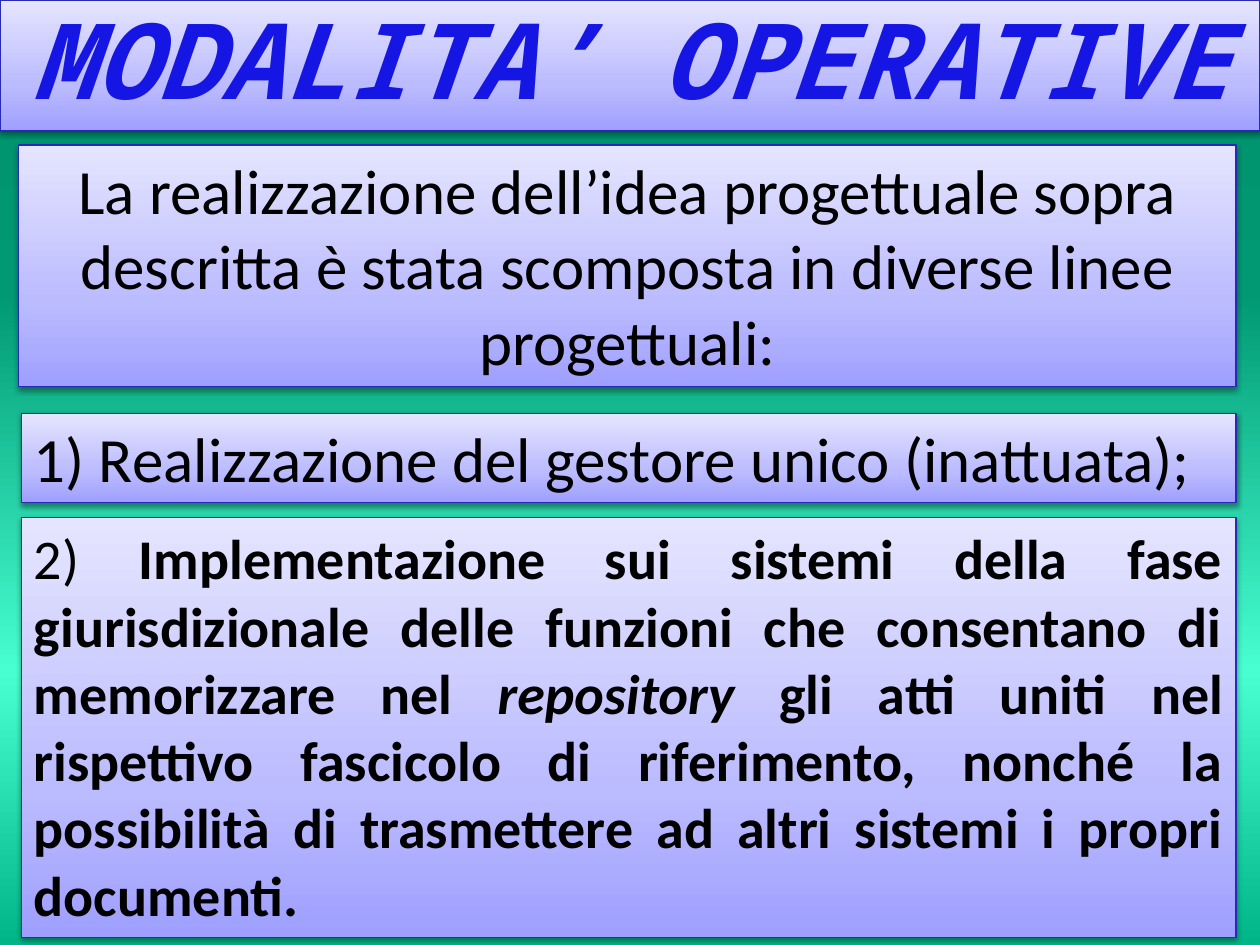
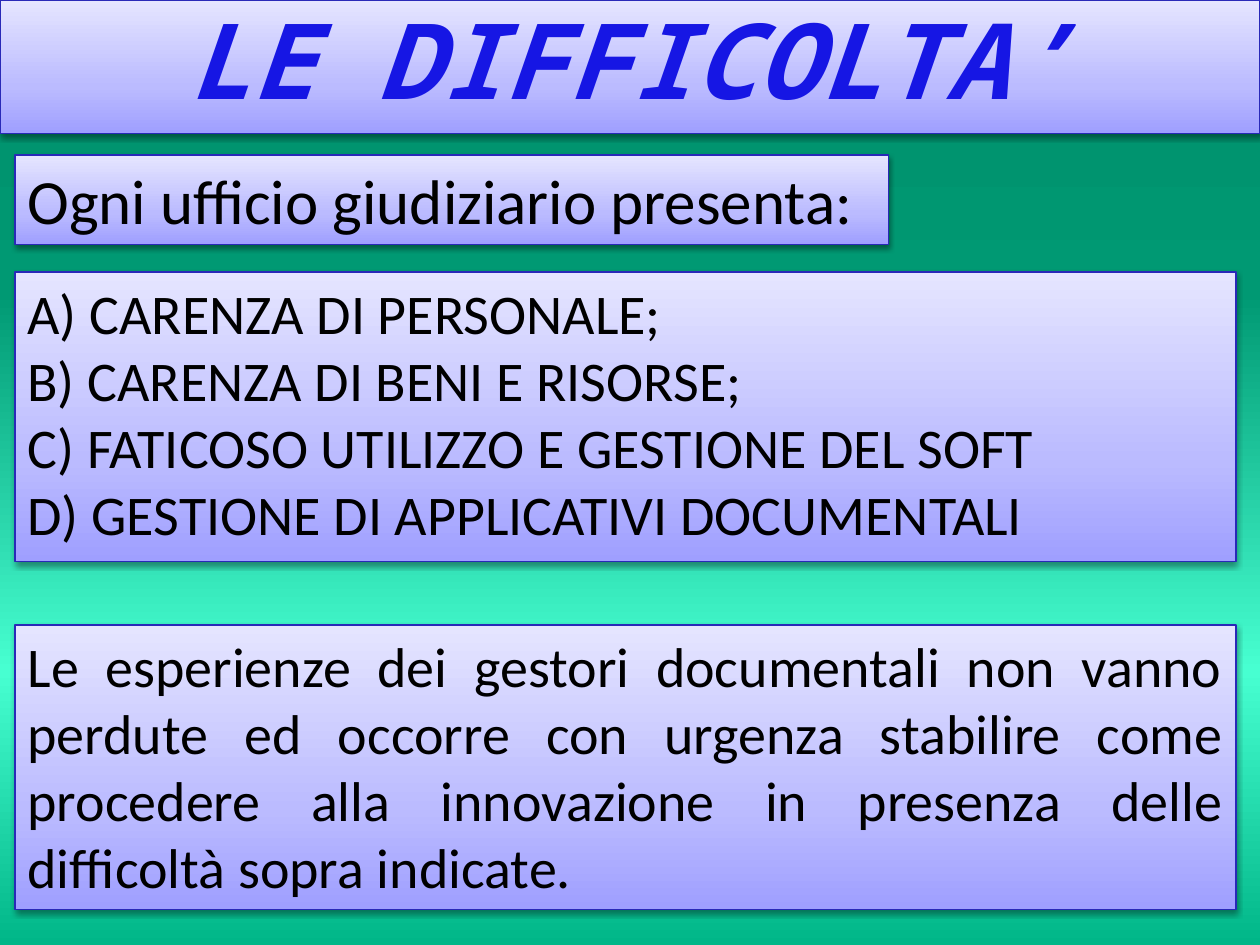
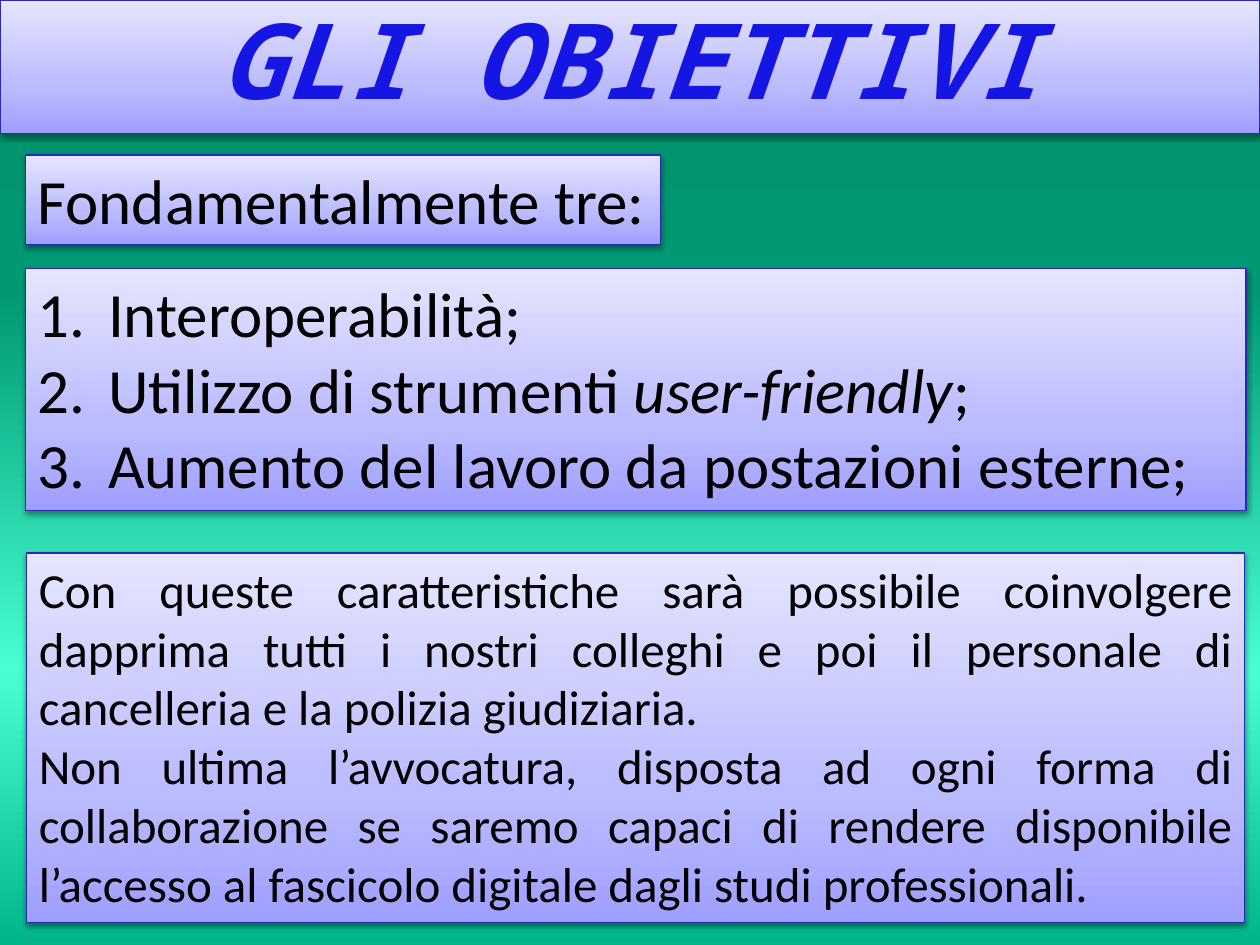
from lxml import etree
from pptx import Presentation
from pptx.dml.color import RGBColor
from pptx.enum.shapes import MSO_SHAPE
from pptx.enum.text import MSO_ANCHOR, MSO_AUTO_SIZE, PP_ALIGN
from pptx.oxml.ns import qn
from pptx.util import Pt

RECT = MSO_SHAPE.RECTANGLE
TOP = MSO_ANCHOR.TOP
GROW = MSO_AUTO_SIZE.SHAPE_TO_FIT_TEXT
LEFT, MID, FULL = PP_ALIGN.LEFT, PP_ALIGN.CENTER, PP_ALIGN.JUSTIFY
SCALE = 9144
WIDE, HIGH = 1000, 750
BLACK, EDGE = "000000", "2929B8"
UP, DOWN = 270, 90
GREEN = [(0, "00B688"), (29, "47FFD1"), (69, "009973"), (97, "008F6B")]
LILAC = [(0, "9F9FFF"), (35, "BBBBFF"), (100, "E5E5FF")]
BLUE = [(0, "7979FF"), (75, "1616E4"), (100, "0000BD")]
BODY = {"name": "Calibri"}
HEAD = {"name": "Noto Sans Mono", "bold": True, "italic": True}
BOLD, SLANT = {"bold": True}, {"italic": True}


def px(size):
    return size * SCALE


def tint(code):
    return RGBColor.from_string(code)


def put(item, look):
    for key, value in look.items():
        setattr(item, key, value)


def add(root, tag, **look):
    return etree.SubElement(root, qn(tag), {k: str(v) for k, v in look.items()})


def blend(fill, root, stops, angle):
    fill.solid()
    old = next(root.iter(qn("a:solidFill")))
    grad = etree.Element(qn("a:gradFill"), rotWithShape="1")
    row = add(grad, "a:gsLst")
    for spot, code in stops:
        add(add(row, "a:gs", pos=spot * 1000), "a:srgbClr", val=code)
    add(grad, "a:lin", ang=angle * 60000, scaled=0)
    old.getparent().replace(old, grad)


class Deck:
    def __init__(self):
        self.file = Presentation()
        put(self.file, {"slide_width": px(WIDE), "slide_height": px(HIGH)})

    def page(self, title, high):
        self.slide = self.file.slides.add_slide(self.file.slide_layouts[6])
        blend(self.slide.background.fill, self.slide.element, GREEN, UP)
        frame = self.panel(0, 0, WIDE, high)
        para = frame.paragraphs[0]
        put(para, {"alignment": MID, "line_spacing": 0.93})
        run = self.run(para, title, 60, HEAD)
        blend(run.font.fill, run._r, BLUE, DOWN)

    def panel(self, x, y, w, h):
        box = self.slide.shapes.add_shape(RECT, px(x), px(y), px(w), px(h))
        blend(box.fill, box.element.spPr, LILAC, UP)
        box.line.color.rgb = tint(EDGE)
        box.line.width = Pt(0.75)
        box.shadow.inherit = False
        glow = box.element.spPr.find(qn("a:effectLst"))
        shade = add(glow, "a:outerShdw", blurRad=Pt(3.1), dist=Pt(1.6),
                    dir=DOWN * 60000, rotWithShape=0)
        add(add(shade, "a:srgbClr", val=BLACK), "a:alpha", val=38000)
        put(box.text_frame, {"word_wrap": True, "auto_size": GROW,
                             "vertical_anchor": TOP})
        return box.text_frame

    def run(self, para, text, size, look):
        run = para.add_run()
        run.text = text
        put(run.font, {"size": Pt(size), **look})
        return run

    def text(self, x, y, w, h, size, paras, align=FULL, count=False):
        frame = self.panel(x, y, w, h)
        for i, parts in enumerate(paras):
            para = frame.add_paragraph() if i else frame.paragraphs[0]
            para.alignment = align
            if count:
                self.number(para)
            for part in [(parts, {})] if isinstance(parts, str) else parts:
                run = self.run(para, part[0], size, {**BODY, **part[1]})
                run.font.color.rgb = tint(BLACK)

    def number(self, para):
        props = para._p.get_or_add_pPr()
        props.set("marL", str(px(56)))
        props.set("indent", str(-px(56)))
        add(props, "a:buFont", typeface="+mj-lt")
        add(props, "a:buAutoNum", type="arabicPeriod")


def main():
    deck = Deck()

    deck.page("MODALITA’ OPERATIVE", 104)
    deck.text(15, 115, 966, 192, 36, [
        "La realizzazione dell’idea progettuale sopra descritta è stata "
        "scomposta in diverse linee progettuali:"], MID)
    deck.text(17, 328, 964, 71, 36, [
        "1) Realizzazione del gestore unico (inattuata);"])
    deck.text(17, 411, 964, 333, 32, [[
        ("2) ", {}),
        ("Implementazione sui sistemi della fase giurisdizionale delle "
         "funzioni che consentano di memorizzare nel ", BOLD),
        ("repository", {**BOLD, **SLANT}),
        (" gli atti uniti nel rispettivo fascicolo di riferimento, nonché "
         "la possibilità di trasmettere ad altri sistemi i propri "
         "documenti.", BOLD)]])

    deck.page("LE DIFFICOLTA’", 106)
    deck.text(12, 123, 693, 71, 36, ["Ogni ufficio giudiziario presenta:"])
    deck.text(12, 216, 969, 230, 32, [
        "A) CARENZA DI PERSONALE;",
        "B) CARENZA DI BENI E RISORSE;",
        "C) FATICOSO UTILIZZO E GESTIONE DEL SOFT",
        "D) GESTIONE DI APPLICATIVI DOCUMENTALI"], LEFT)
    deck.text(12, 496, 969, 226, 32, [
        "Le esperienze dei gestori documentali non vanno perdute ed occorre "
        "con urgenza stabilire come procedere alla innovazione in presenza "
        "delle difficoltà sopra indicate."])

    deck.page("GLI OBIETTIVI", 106)
    deck.text(20, 123, 504, 71, 36, ["Fondamentalmente tre:"])
    deck.text(20, 213, 969, 192, 36, [
        "Interoperabilità;",
        [("Utilizzo di strumenti ", {}), ("user-friendly", SLANT), (";", {})],
        "Aumento del lavoro da postazioni esterne;"], LEFT, True)
    deck.text(21, 439, 967, 293, 28, [
        "Con queste caratteristiche sarà possibile coinvolgere dapprima "
        "tutti i nostri colleghi e poi il personale di cancelleria e la "
        "polizia giudiziaria.",
        "Non ultima l’avvocatura, disposta ad ogni forma di collaborazione "
        "se saremo capaci di rendere disponibile l’accesso al fascicolo "
        "digitale dagli studi professionali."])

    deck.file.save("out.pptx")


if __name__ == "__main__":
    main()
